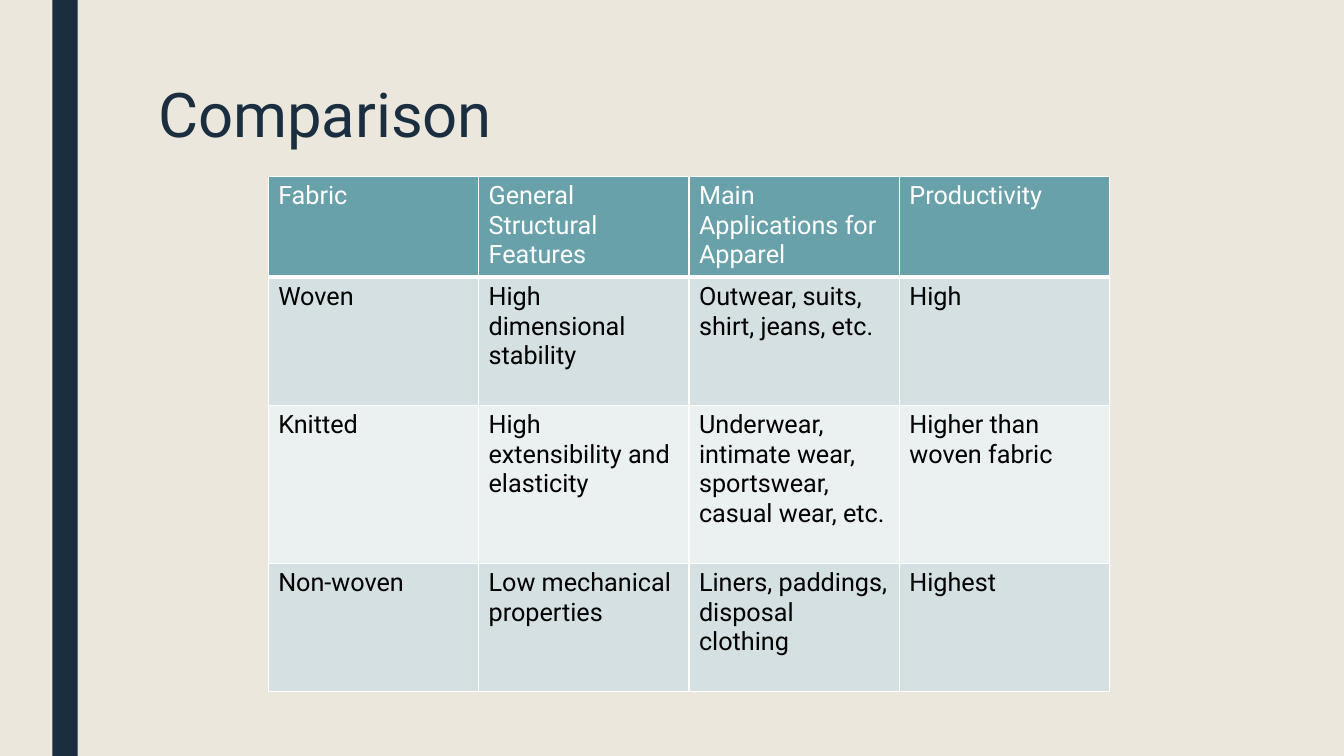
from dataclasses import dataclass

from lxml.etree import SubElement
from pptx import Presentation
from pptx.dml.color import RGBColor
from pptx.enum.shapes import MSO_SHAPE as Shape
from pptx.enum.text import MSO_ANCHOR as Anchor
from pptx.oxml.ns import qn
from pptx.util import Inches, Pt

FONT = "Roboto"
COLORS = {
    "background": "EBE7DD",
    "navy": "1A2E40",
    "teal": "69A1AB",
    "dark band": "D4E0E2",
    "light band": "EBF0F1",
    "white": "FFFFFF",
    "black": "000000",
}
COLUMN_WIDTH = 2.087


@dataclass
class FabricRow:
    height: float
    fill: str
    ink: str
    texts: tuple[str, ...]
    top_line: float = 1
    bottom_line: float = 1


ROWS = [
    FabricRow(0.98, "teal", "white",
              ("Fabric", "General Structural Features",
               "Main Applications for Apparel", "Productivity"), bottom_line=3),
    FabricRow(1.27, "dark band", "black",
              ("Woven", "High dimensional stability",
               "Outwear, suits, shirt, jeans, etc.", "High"), top_line=3),
    FabricRow(1.57, "light band", "black",
              ("Knitted", "High extensibility and elasticity",
               "Underwear, intimate wear, sportswear, casual wear, etc.",
               "Higher than woven fabric")),
    FabricRow(1.27, "dark band", "black",
              ("Non-woven", "Low mechanical properties",
               "Liners, paddings, disposal clothing", "Highest")),
]


def rgb(name: str) -> RGBColor:
    return RGBColor.from_string(COLORS[name])


def style_text(frame, size: float, color: str) -> None:
    for para in frame.paragraphs:
        for span in para.runs:
            span.font.name = FONT
            span.font.size = Pt(size)
            span.font.color.rgb = rgb(color)


def add_border(cell, side: str, width: float) -> None:
    line = SubElement(cell._tc.get_or_add_tcPr(), qn(f"a:ln{side}"), w=str(Pt(width)))
    fill = SubElement(line, qn("a:solidFill"))
    SubElement(fill, qn("a:srgbClr"), val=COLORS["white"])


def add_side_bar(page) -> None:
    bar = page.shapes.add_shape(Shape.RECTANGLE, Inches(0.52), 0, Inches(0.25), Inches(7.5))
    bar.shadow.inherit = False
    bar.fill.solid()
    bar.fill.fore_color.rgb = rgb("navy")
    bar.line.fill.background()


def add_title(page, text: str) -> None:
    box = page.shapes.add_textbox(Inches(1.47), Inches(0.12), Inches(10.5), Inches(1.62))
    frame = box.text_frame
    frame.word_wrap = True
    frame.vertical_anchor = Anchor.BOTTOM
    frame.margin_bottom = Inches(0.25)
    frame.text = text
    frame.paragraphs[0].line_spacing = 0.89
    style_text(frame, 44, "navy")


def add_fabric_table(page, rows: list[FabricRow]) -> None:
    column_count = len(rows[0].texts)
    table = page.shapes.add_table(
        len(rows), column_count, Inches(2.66), Inches(1.75),
        Inches(COLUMN_WIDTH * column_count), Inches(sum(row.height for row in rows)),
    ).table
    for column in table.columns:
        column.width = Inches(COLUMN_WIDTH)
    for row_index, row in enumerate(rows):
        table.rows[row_index].height = Inches(row.height)
        borders = {"L": 1, "R": 1, "T": row.top_line, "B": row.bottom_line}
        for column_index, text in enumerate(row.texts):
            cell = table.cell(row_index, column_index)
            cell.text_frame.text = text
            style_text(cell.text_frame, 18, row.ink)
            for span in cell.text_frame.paragraphs[0].runs:
                span.font.bold = False
            for side, width in borders.items():
                add_border(cell, side, width)
            cell.fill.solid()
            cell.fill.fore_color.rgb = rgb(row.fill)


def main() -> None:
    deck = Presentation()
    deck.slide_width, deck.slide_height = Inches(13.33), Inches(7.5)
    page = deck.slides.add_slide(deck.slide_layouts[6])
    page.background.fill.solid()
    page.background.fill.fore_color.rgb = rgb("background")

    # Side bar and heading
    add_side_bar(page)
    add_title(page, "Comparison")

    # Fabric comparison
    add_fabric_table(page, ROWS)

    deck.save("out.pptx")


if __name__ == "__main__":
    main()
